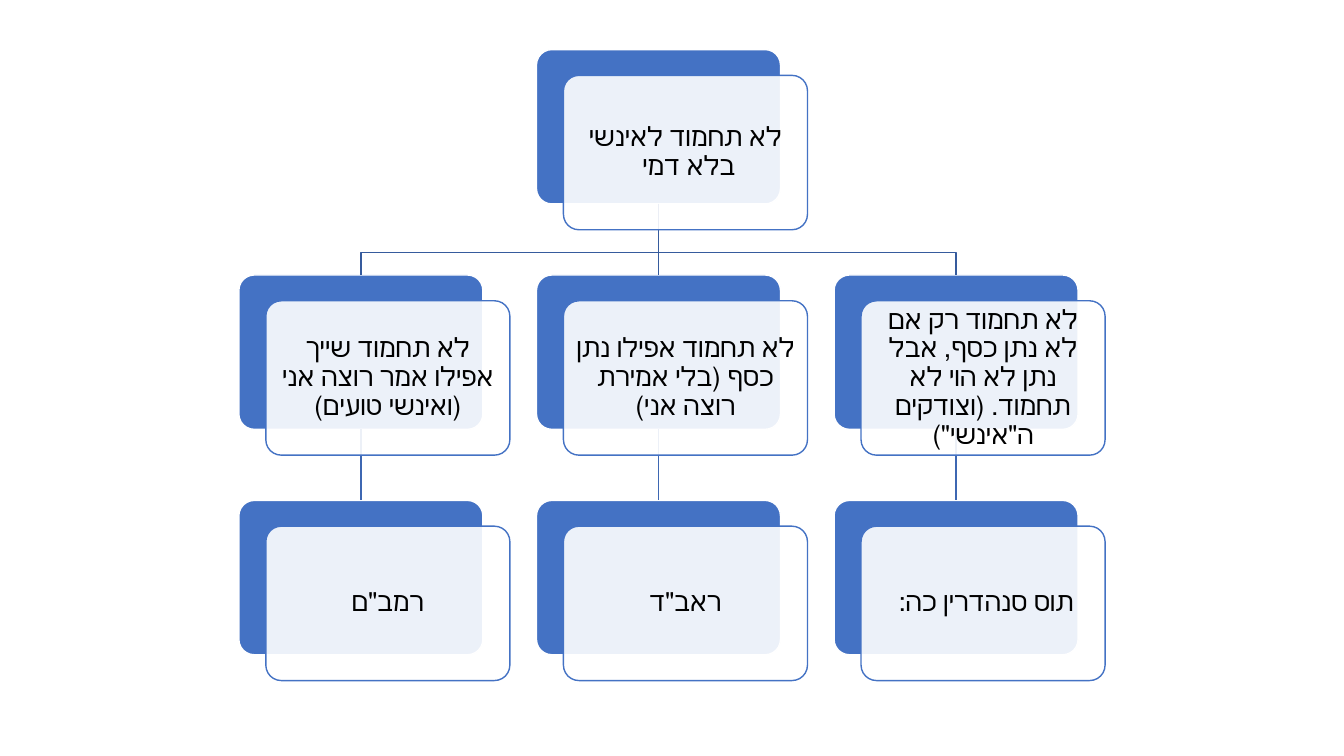
"""Build a Hebrew hierarchy chart of opinions on the prohibition of coveting."""
from lxml.etree import SubElement
from pptx import Presentation
from pptx.dml.color import RGBColor
from pptx.enum.shapes import MSO_CONNECTOR, MSO_SHAPE
from pptx.enum.text import MSO_ANCHOR, PP_ALIGN
from pptx.oxml.ns import qn
from pptx.util import Cm, Pt

BLUE = RGBColor(0x44, 0x72, 0xC4)
WHITE = RGBColor(0xFF, 0xFF, 0xFF)
BLACK = RGBColor(0x00, 0x00, 0x00)
UPPER_LINK = RGBColor(0x36, 0x5B, 0x9D)
LOWER_LINK = RGBColor(0x3E, 0x67, 0xB2)

LEFT, TOP = 6.02, 1.25
COLUMN_STEP, ROW_STEP = 7.5, 5.68
CARD_WIDTH, CARD_HEIGHT = 6.15, 3.89
SHIFT_X, SHIFT_Y = 0.68, 0.65
BRANCH_Y = 6.37

ROOT = "לא תחמוד לאינשי בלא דמי "
OPINIONS = [
    ("לא תחמוד שייך אפילו אמר רוצה אני (ואינשי טועים)", "רמב\"ם"),
    ("לא תחמוד אפילו נתן כסף (בלי אמירת רוצה אני)", "ראב\"ד"),
    ("לא תחמוד רק אם לא נתן כסף, אבל נתן לא הוי לא תחמוד. (וצודקים ה\"אינשי\")",
     "תוס סנהדרין כה: "),
]


def write_text(frame, text, font="Calibri", hebrew_font="+mn-cs", size=19, color=BLACK):
    """Fill a text frame with one centred right-to-left paragraph."""
    paragraph = frame.paragraphs[0]
    paragraph.alignment = PP_ALIGN.CENTER
    paragraph.line_spacing = 0.9
    paragraph._p.get_or_add_pPr().set("rtl", "1")
    run = paragraph.add_run()
    run.text = text
    run.font.name = font
    run.font.size = Pt(size)
    run.font.color.rgb = color
    properties = run._r.get_or_add_rPr()
    properties.set("lang", "he-IL")
    SubElement(properties, qn("a:cs")).set("typeface", hebrew_font)


class Hierarchy:
    """Draw cards and links in one style on the current slide."""

    def __init__(self, slide):
        """Keep the slide and the line width."""
        self.shapes = slide.shapes
        self.line_width = Pt(1)

    def card(self, x, y, fill, outline):
        """Add a rounded card with its top left corner at x, y."""
        card = self.shapes.add_shape(MSO_SHAPE.ROUNDED_RECTANGLE, Cm(x), Cm(y),
                                     Cm(CARD_WIDTH), Cm(CARD_HEIGHT))
        card.adjustments[0] = 0.1
        card.shadow.inherit = False
        card.fill.solid()
        card.fill.fore_color.rgb = fill
        card.line.color.rgb = outline
        card.line.width = self.line_width
        return card

    def back_card(self, column, row):
        """Add the solid card of a node."""
        return self.card(LEFT + column * COLUMN_STEP, TOP + row * ROW_STEP, BLUE, WHITE)

    def front_card(self, column, row, text):
        """Add the translucent card that carries the text of a node."""
        card = self.card(LEFT + column * COLUMN_STEP + SHIFT_X,
                         TOP + row * ROW_STEP + SHIFT_Y, WHITE, BLUE)
        fill_color = card._element.spPr.find(qn("a:solidFill")).find(qn("a:srgbClr"))
        SubElement(fill_color, qn("a:alpha")).set("val", "90000")
        frame = card.text_frame
        frame.word_wrap = True
        frame.vertical_anchor = MSO_ANCHOR.MIDDLE
        frame.margin_left = frame.margin_right = Cm(0.2)
        frame.margin_top = frame.margin_bottom = Cm(0.2)
        write_text(frame, text)

    def straight_link(self, parent, child, color):
        """Join the bottom of the parent to the top of the child."""
        link = self.shapes.add_connector(MSO_CONNECTOR.STRAIGHT, 0, 0, 0, 0)
        link.begin_connect(parent, 2)
        link.end_connect(child, 0)
        link.line.color.rgb = color
        link.line.width = self.line_width
        SubElement(link._element.spPr, qn("a:effectLst"))

    def bent_link(self, parent, child, color):
        """Lead from the parent over the branch height down to the child."""
        start_x = parent.left + parent.width // 2
        end_x = child.left + child.width // 2
        builder = self.shapes.build_freeform(start_x, parent.top + parent.height)
        builder.add_line_segments([(start_x, Cm(BRANCH_Y)), (end_x, Cm(BRANCH_Y)),
                                   (end_x, child.top)], close=False)
        link = builder.convert_to_shape()
        link.shadow.inherit = False
        link.fill.background()
        link.line.color.rgb = color
        link.line.width = self.line_width


def main():
    """Build and save the slide."""
    presentation = Presentation()
    presentation.slide_width, presentation.slide_height = Cm(33.87), Cm(19.05)
    hierarchy = Hierarchy(presentation.slides.add_slide(presentation.slide_layouts[6]))

    root = hierarchy.back_card(1, 0)
    for column in range(len(OPINIONS)):
        opinion = hierarchy.back_card(column, 1)
        source = hierarchy.back_card(column, 2)
        link_root = hierarchy.straight_link if column == 1 else hierarchy.bent_link
        link_root(root, opinion, UPPER_LINK)
        hierarchy.straight_link(opinion, source, LOWER_LINK)

    hierarchy.front_card(1, 0, ROOT)
    for column, texts in enumerate(OPINIONS):
        for row, text in enumerate(texts, start=1):
            hierarchy.front_card(column, row, text)

    presentation.save("out.pptx")


if __name__ == "__main__":
    main()
